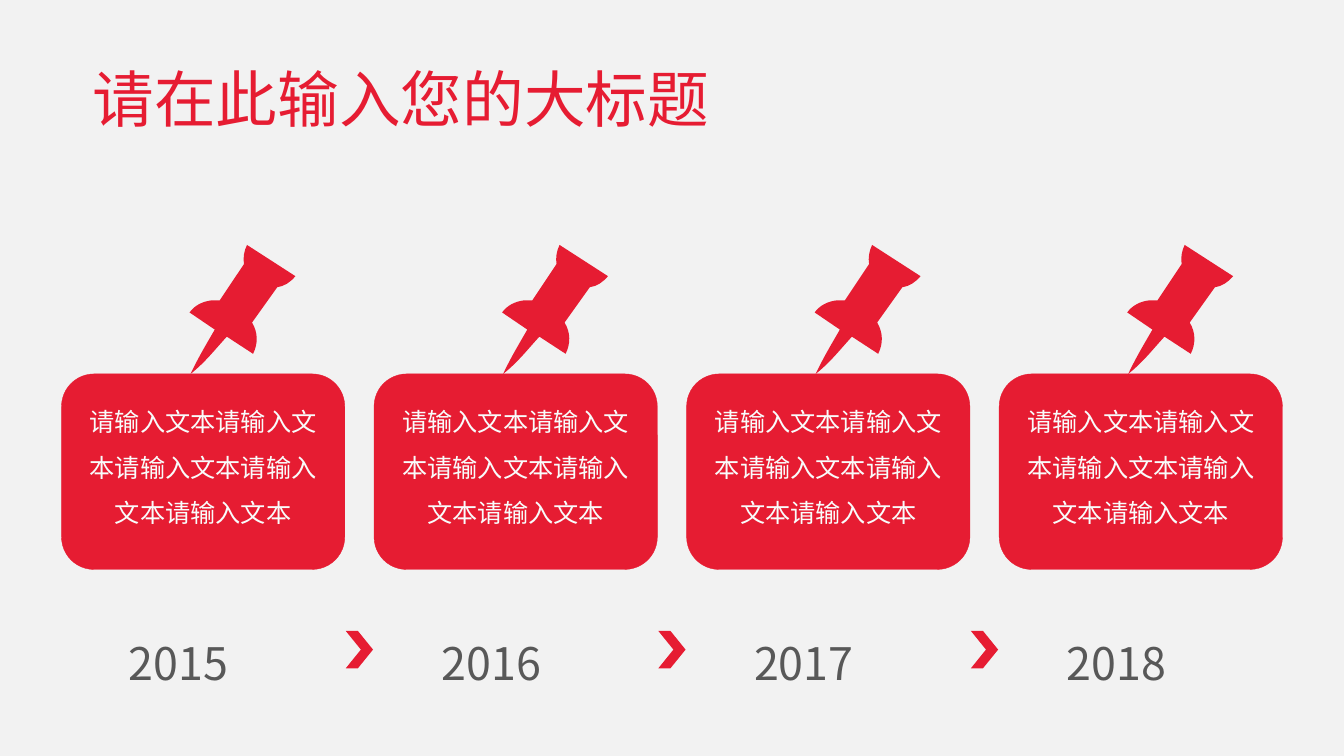
from lxml import etree
from pptx import Presentation
from pptx.dml.color import RGBColor
from pptx.enum import shapes, text
from pptx.oxml.ns import qn
from pptx.util import Inches, Pt

FONT = "Noto Sans CJK SC"
RED, WHITE, GREY, PALE = "E61C32", "F9FCFB", "585858", "F2F2F2"
TITLE = "请在此输入您的大标题"
BODY = "请输入文本" * 5
YEARS = ["2015", "2016", "2017", "2018"]
CARD_LEFT, CARD_STEP = 0.61, 3.1

PIN_LEFT, PIN_TOP = 1.27, 2.43
PIN_START = (0.57, 0)
PIN_SEGMENTS = [
    [(1.05, 0.31)],
    [(1, 0.37), (0.94, 0.41), (0.87, 0.42)],
    [(0.62, 0.77)],
    [(0.68, 0.87), (0.68, 0.98), (0.63, 1.08)],
    [(0.37, 0.91)],
    [(0.25, 1.04), (0.16, 1.16), (0.01, 1.28)],
    [(0.09, 1.11), (0.17, 0.98), (0.25, 0.84)],
    [(0, 0.67)],
    [(0.05, 0.6), (0.13, 0.56), (0.22, 0.55)],
    [(0.24, 0.55), (0.27, 0.55), (0.3, 0.55)],
    [(0.54, 0.19)],
    [(0.53, 0.13), (0.54, 0.06), PIN_START],
]


def colour(value):
    return RGBColor.from_string(value)


def paint(shape, fill):
    shape.shadow.inherit = False
    shape.fill.solid()
    shape.fill.fore_color.rgb = colour(fill)
    shape.line.fill.background()


def write(frame, words, size, ink, align, spacing, anchor):
    frame.word_wrap = True
    frame.auto_size = text.MSO_AUTO_SIZE.NONE
    frame.vertical_anchor = anchor
    para = frame.paragraphs[0]
    para.alignment = align
    para.line_spacing = spacing
    span = para.add_run()
    span.text = words
    span.font.size = Pt(size)
    span.font.name = FONT
    span.font.color.rgb = colour(ink)
    east_asian = etree.SubElement(span.font._element, qn("a:ea"))
    east_asian.set("typeface", FONT)


def add_backdrop(deck, page):
    backdrop = page.shapes.add_shape(
        shapes.MSO_SHAPE.RECTANGLE, 0, 0, deck.slide_width, deck.slide_height)
    paint(backdrop, PALE)
    page.slide_layout.shapes._spTree.insert(2, backdrop._element)


def add_title(page):
    title = page.shapes.title
    title.left, title.top = Inches(0.82), Inches(0.18)
    title.width, title.height = Inches(11.81), Inches(1.22)
    write(title.text_frame, TITLE, 44, RED, text.PP_ALIGN.LEFT, 0.9,
          text.MSO_ANCHOR.BOTTOM)


def bend_curves(pin):
    lines = list(pin._element.iter(qn("a:lnTo")))
    for segment in PIN_SEGMENTS:
        group, lines = lines[:len(segment)], lines[len(segment):]
        if len(group) == 3:
            curve = etree.Element(qn("a:cubicBezTo"))
            group[0].addprevious(curve)
            for line in group:
                curve.append(line[0])
                line.getparent().remove(line)


def add_pin(page, left):
    outline = [PIN_START] + [point for segment in PIN_SEGMENTS for point in segment]
    points = [(Inches(left + PIN_LEFT + x), Inches(PIN_TOP + y)) for x, y in outline]
    builder = page.shapes.build_freeform(*points[0])
    builder.add_line_segments(points[1:], close=True)
    pin = builder.convert_to_shape()
    bend_curves(pin)
    paint(pin, RED)


def add_card(page, left):
    card = page.shapes.add_shape(
        shapes.MSO_SHAPE.ROUNDED_RECTANGLE,
        Inches(left), Inches(3.71), Inches(2.81), Inches(1.94))
    paint(card, RED)
    card.line.color.rgb = colour(RED)
    card.line.width = Pt(0.25)
    frame = card.text_frame
    frame.margin_left = frame.margin_right = Inches(0.08)
    frame.margin_top = frame.margin_bottom = Inches(0.08)
    write(frame, BODY, 18, WHITE, text.PP_ALIGN.CENTER, 1.5, text.MSO_ANCHOR.TOP)


def add_year(page, left, year):
    box = page.shapes.add_textbox(
        Inches(left + 0.57), Inches(6.12), Inches(1.68), Inches(0.64))
    write(box.text_frame, year, 32, GREY, text.PP_ALIGN.JUSTIFY, 1.5,
          text.MSO_ANCHOR.MIDDLE)


def add_chevron(page, left):
    chevron = page.shapes.add_shape(
        shapes.MSO_SHAPE.CHEVRON,
        Inches(left + 2.82), Inches(6.26), Inches(0.27), Inches(0.37))
    chevron.adjustments[0] = 0.555
    paint(chevron, RED)


def main():
    deck = Presentation()
    deck.slide_width, deck.slide_height = Inches(13.33), Inches(7.5)
    page = deck.slides.add_slide(deck.slide_layouts[5])
    add_backdrop(deck, page)
    add_title(page)
    lefts = [CARD_LEFT + index * CARD_STEP for index in range(len(YEARS))]
    for left, year in zip(lefts, YEARS):
        add_pin(page, left)
        add_card(page, left)
        add_year(page, left, year)
    for left in lefts[:-1]:
        add_chevron(page, left)
    deck.save("out.pptx")


if __name__ == "__main__":
    main()
